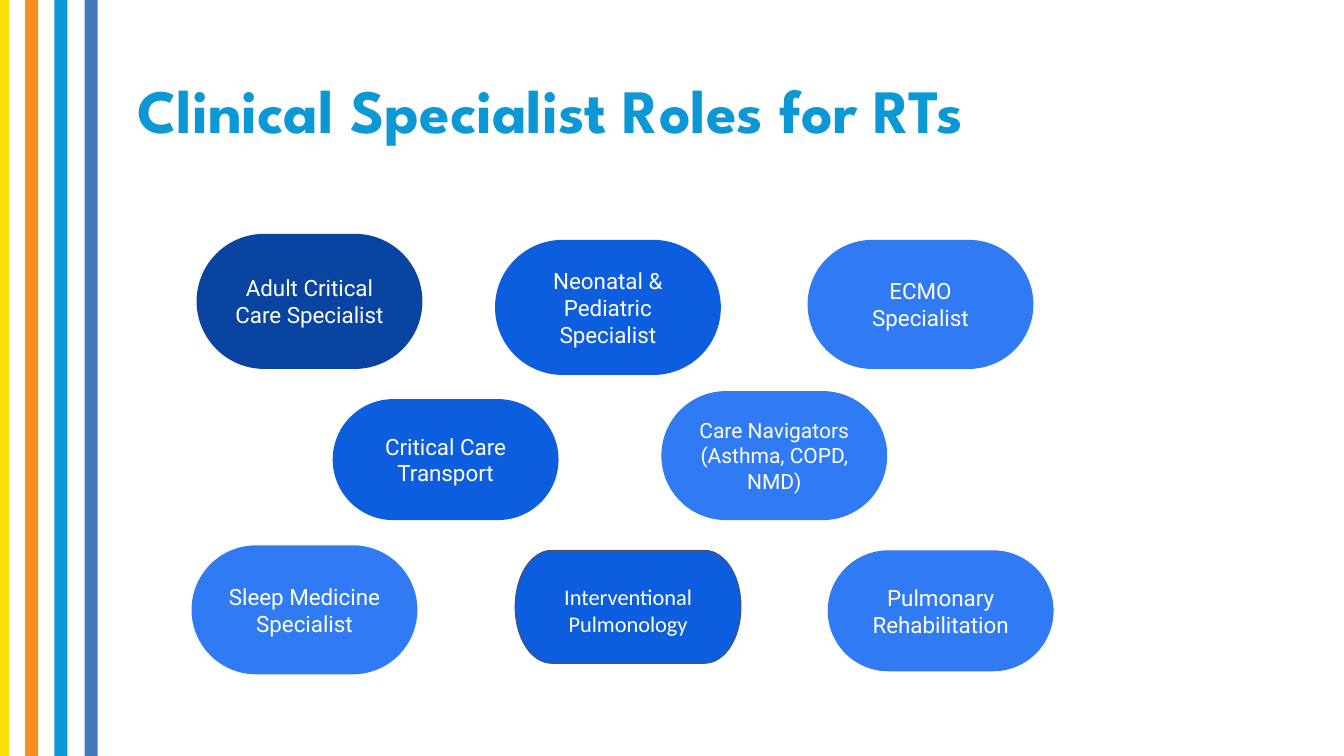
from pptx import Presentation
from pptx.dml.color import RGBColor
from pptx.enum.shapes import MSO_SHAPE as Shape
from pptx.enum.text import MSO_ANCHOR as Anchor, MSO_AUTO_SIZE as AutoSize, PP_ALIGN as Align
from pptx.util import Emu, Pt

EMU_PER_PX = 9144
WIDTH, HEIGHT = 1333, 750
WHITE, CYAN = "FFFFFF", "0C98D5"
NAVY, BLUE, SKY = "0944A1", "0D5DDF", "307BF3"
PILL_WIDTH = 224

STRIPES = [(0, 9, "F8DF08"), (25, 13, "F78E1E"), (54, 13, CYAN), (84, 13, "4379BD")]

ROLES = [
    ("Adult Critical Care Specialist", 195, 232, 134, NAVY, 16),
    ("Neonatal & Pediatric Specialist", 491, 238, 134, BLUE, 16),
    ("ECMO Specialist", 801, 238, 128, SKY, 16),
    ("Critical Care Transport", 330, 396, 120, BLUE, 16),
    ("Care Navigators (Asthma, COPD, NMD)", 656, 388, 128, SKY, 15),
    ("Sleep Medicine Specialist", 190, 541, 128, SKY, 16),
    ("Pulmonary Rehabilitation", 821, 546, 120, SKY, 16),
]


def px(length):
    return Emu(length * EMU_PER_PX)


def color(value):
    return RGBColor.from_string(value)


class SlideBuilder:
    def __init__(self, slide, font):
        self.slide = slide
        self.font = font

    def set_text(self, box, text, size, font=None, ink=WHITE, align=Align.CENTER,
                 anchor=Anchor.MIDDLE, inset=13, bold=False):
        frame = box.text_frame
        frame.word_wrap = True
        frame.auto_size = AutoSize.NONE
        frame.vertical_anchor = anchor
        frame.margin_left = frame.margin_right = px(inset)
        frame.margin_top = frame.margin_bottom = px(inset)
        para = frame.paragraphs[0]
        para.text = text
        para.alignment = align
        para.font.name = font or self.font
        para.font.size = Pt(size)
        para.font.bold = bold
        para.font.color.rgb = color(ink)
        return para

    def title(self, text, left, top, width, height):
        box = self.slide.shapes.title
        box.left, box.top, box.width, box.height = map(px, (left, top, width, height))
        para = self.set_text(box, text, 44, "League Spartan", CYAN, Align.LEFT, inset=10, bold=True)
        para.line_spacing = 0.9

    def shape(self, kind, left, top, width, height, fill, line=None):
        shape = self.slide.shapes.add_shape(kind, *map(px, (left, top, width, height)))
        shape.shadow.inherit = False
        shape.fill.solid()
        shape.fill.fore_color.rgb = color(fill)
        if line:
            shape.line.color.rgb = color(line)
            shape.line.width = Pt(0.75)
        else:
            shape.line.fill.background()
        return shape

    def pill(self, text, left, top, height, fill, size):
        pill = self.shape(Shape.ROUNDED_RECTANGLE, left, top, PILL_WIDTH, height, fill)
        pill.adjustments[0] = 0.5
        self.set_text(pill, text, size)

    def label(self, text, left, top, width, height, size, font):
        box = self.slide.shapes.add_textbox(*map(px, (left, top, width, height)))
        self.set_text(box, text, size, font, anchor=Anchor.TOP, inset=10)


def main():
    deck = Presentation()
    deck.slide_width, deck.slide_height = px(WIDTH), px(HEIGHT)
    page = SlideBuilder(deck.slides.add_slide(deck.slide_layouts[5]), "Roboto")

    for left, width, fill in STRIPES:
        page.shape(Shape.RECTANGLE, left, 0, width, HEIGHT, fill)
    page.title("Clinical Specialist Roles for RTs", 126, 40, 998, 145)
    for role in ROLES:
        page.pill(*role)
    page.shape(Shape.FLOWCHART_TERMINATOR, 511, 546, PILL_WIDTH, 112, BLUE, "44546A")
    page.label("Interventional Pulmonology", 529, 569, 188, 74, 16, "Calibri")

    deck.save("out.pptx")


if __name__ == "__main__":
    main()
